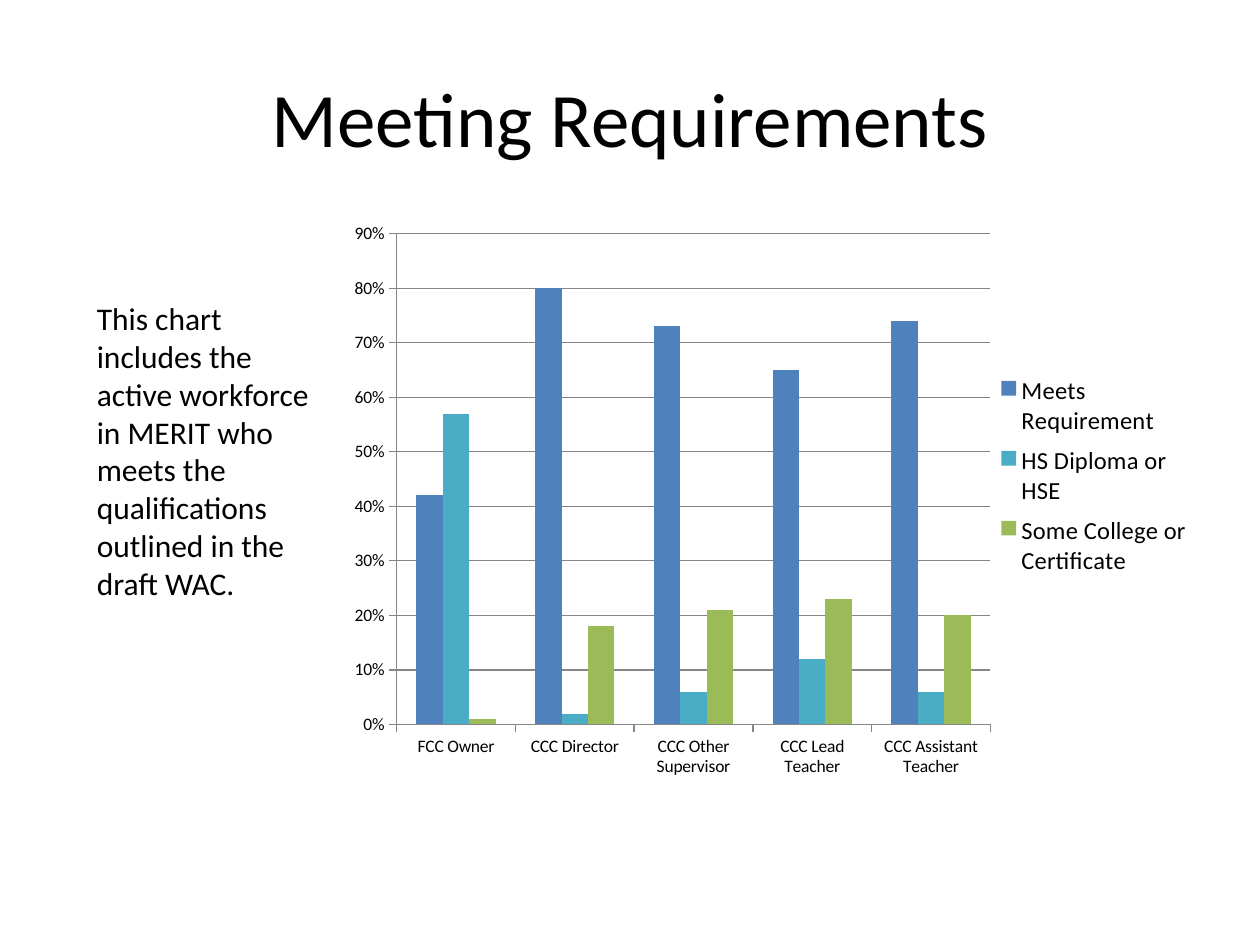
"""Build the Meeting Requirements slide: a title, a note and a clustered column chart."""
from dataclasses import dataclass
from typing import Any

from pptx import Presentation
from pptx.chart.data import CategoryChartData
from pptx.dml.color import RGBColor
from pptx.enum.chart import XL_CHART_TYPE as ChartType, XL_LEGEND_POSITION as LegendPos
from pptx.enum.chart import XL_TICK_MARK as Tick
from pptx.enum.text import MSO_ANCHOR as Anchor, PP_ALIGN as Align
from pptx.oxml import parse_xml
from pptx.oxml.ns import nsdecls, qn
from pptx.util import Inches, Pt

BLACK = RGBColor(0x00, 0x00, 0x00)
GRAY = RGBColor(0x86, 0x86, 0x86)
BLUE = RGBColor(0x4F, 0x81, 0xBD)
TEAL = RGBColor(0x4B, 0xAC, 0xC6)
GREEN = RGBColor(0x9B, 0xBB, 0x59)
FONT = "Calibri"
WIDTH, HEIGHT = Inches(10), Inches(7.5)


@dataclass(frozen=True)
class Box:
    """A rectangle in shares of its container."""
    x: float
    y: float
    w: float
    h: float

    def emu(self) -> tuple[int, int, int, int]:
        """Return left, top, width and height on the slide."""
        return (int(self.x * WIDTH), int(self.y * HEIGHT),
                int(self.w * WIDTH), int(self.h * HEIGHT))


@dataclass(frozen=True)
class Label:
    """A text block with its place and style."""
    text: str
    box: Box
    size: int
    align: Align
    anchor: Anchor


@dataclass(frozen=True)
class Series:
    """A named set of shares with its colour."""
    name: str
    values: tuple[float, ...]
    color: RGBColor


LABELS = (
    Label("Meeting Requirements", Box(0.05, 0.04, 0.9, 0.167), 44, Align.CENTER, Anchor.MIDDLE),
    Label("This chart includes the active workforce in MERIT who meets the "
          "qualifications outlined in the draft WAC.",
          Box(0.067, 0.31, 0.2, 0.336), 18, Align.LEFT, Anchor.TOP),
)
ROLES = ("FCC Owner", "CCC Director", "CCC Other Supervisor",
         "CCC Lead Teacher", "CCC Assistant Teacher")
SERIES = (
    Series("Meets Requirement", (0.42, 0.8, 0.73, 0.65, 0.74), BLUE),
    Series("HS Diploma or HSE", (0.57, 0.02, 0.06, 0.12, 0.06), TEAL),
    Series("Some College or Certificate", (0.01, 0.18, 0.21, 0.23, 0.2), GREEN),
)
CHART = Box(0.267, 0.223, 0.683, 0.611)
PLOT = Box(0.07, 0.04, 0.69, 0.85)
LEGEND = Box(0.76, 0.27, 0.24, 0.38)


def add_label(s: Any, label: Label) -> None:
    """Draw one text block."""
    tf = s.shapes.add_textbox(*label.box.emu()).text_frame
    tf.word_wrap = True
    tf.vertical_anchor = label.anchor
    tf.text = label.text
    p = tf.paragraphs[0]
    p.alignment = label.align
    font = p.runs[0].font
    font.name, font.size, font.color.rgb = FONT, Pt(label.size), BLACK


def layout_xml(box: Box, target: str = "") -> Any:
    """Return a manual chart layout."""
    inner = f'<c:layoutTarget val="{target}"/>' if target else ""
    return parse_xml(
        f'<c:layout {nsdecls("c")}><c:manualLayout>{inner}'
        '<c:xMode val="edge"/><c:yMode val="edge"/>'
        f'<c:x val="{box.x}"/><c:y val="{box.y}"/><c:w val="{box.w}"/><c:h val="{box.h}"/>'
        '</c:manualLayout></c:layout>')


def style_axis(axis: Any) -> None:
    """Give an axis gray lines and outside ticks."""
    axis.major_tick_mark, axis.minor_tick_mark = Tick.OUTSIDE, Tick.NONE
    axis.format.line.color.rgb = GRAY
    axis.format.line.width = Pt(0.75)


def add_requirement_chart(s: Any) -> None:
    """Draw the chart of requirements by role."""
    data = CategoryChartData(number_format="0%")
    data.categories = ROLES
    for series in SERIES:
        data.add_series(series.name, series.values)
    chart = s.shapes.add_chart(ChartType.COLUMN_CLUSTERED, *CHART.emu(), data).chart
    chart.has_title = False
    chart.font.name, chart.font.size, chart.font.color.rgb = FONT, Pt(10), BLACK

    plot = chart.plots[0]
    plot.gap_width, plot.overlap, plot.vary_by_categories = 150, 0, False
    for drawn, series in zip(plot.series, SERIES):
        drawn.format.fill.solid()
        drawn.format.fill.fore_color.rgb = series.color

    for axis in (chart.category_axis, chart.value_axis):
        style_axis(axis)
    values = chart.value_axis
    values.minimum_scale, values.maximum_scale, values.major_unit = 0, 0.9, 0.1
    values.tick_labels.number_format = "0%"
    values.tick_labels.number_format_is_linked = False
    values.has_major_gridlines = True
    values.major_gridlines.format.line.color.rgb = GRAY
    values.major_gridlines.format.line.width = Pt(0.75)

    chart.has_legend = True
    legend = chart.legend
    legend.position, legend.include_in_layout = LegendPos.RIGHT, False
    legend.font.name, legend.font.size, legend.font.color.rgb = FONT, Pt(14), BLACK

    area = chart.element.chart.plotArea if hasattr(chart, "element") else chart._chartSpace.chart.plotArea
    for parent, index, box, target in ((area, 0, PLOT, "inner"), (legend._element, 1, LEGEND, "")):
        for old in parent.findall(qn("c:layout")):
            parent.remove(old)
        parent.insert(index, layout_xml(box, target))


def main() -> None:
    """Build and save the slide."""
    prs = Presentation()
    prs.slide_width, prs.slide_height = WIDTH, HEIGHT
    s = prs.slides.add_slide(prs.slide_layouts[6])
    for label in LABELS:
        add_label(s, label)
    add_requirement_chart(s)
    prs.save("out.pptx")


if __name__ == "__main__":
    main()
